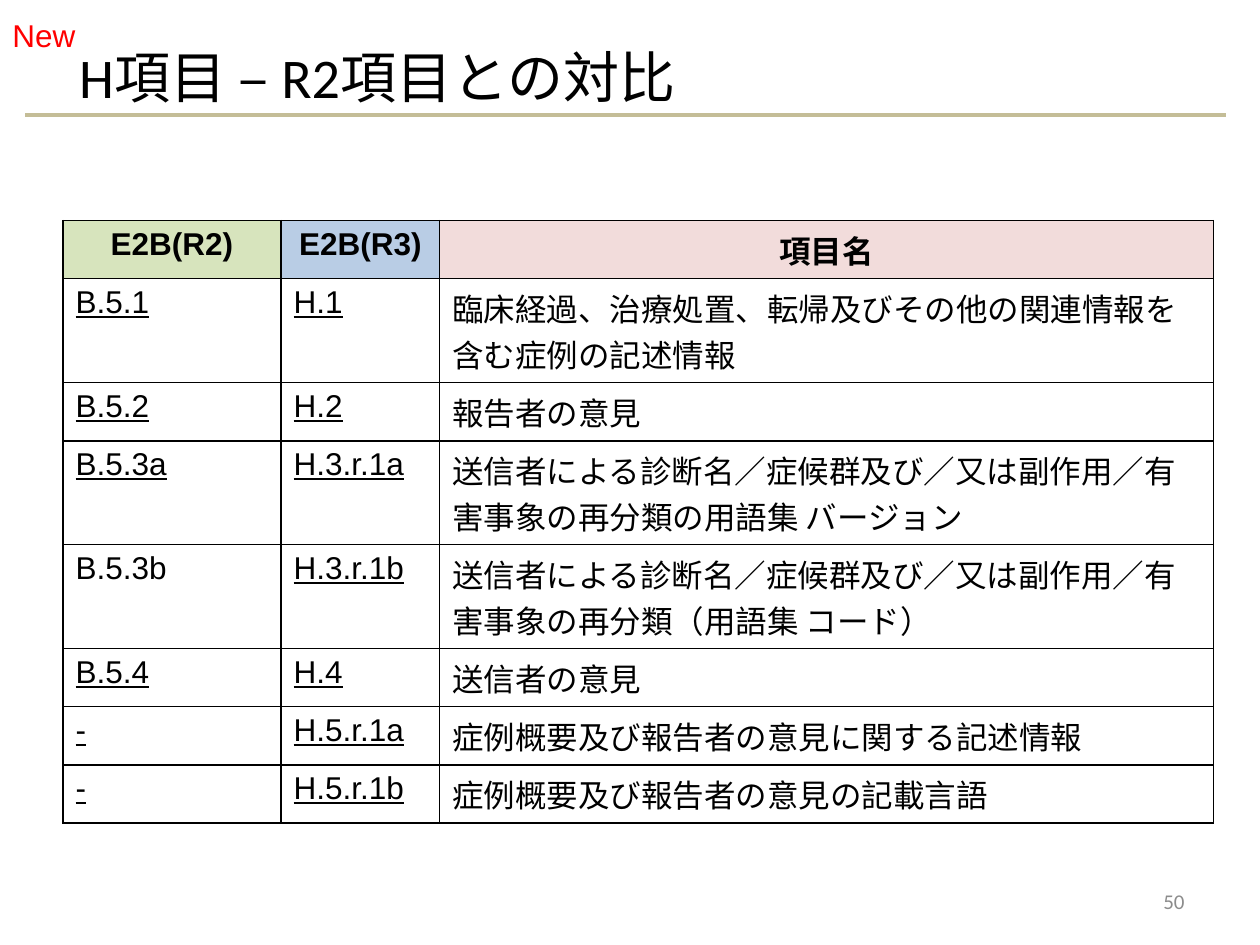
from lxml import etree
from pptx import Presentation
from pptx.dml.color import RGBColor
from pptx.enum.shapes import MSO_CONNECTOR
from pptx.enum.text import MSO_ANCHOR, PP_ALIGN
from pptx.oxml.ns import qn
from pptx.util import Inches, Pt

LEFT, CENTER, RIGHT = PP_ALIGN.LEFT, PP_ALIGN.CENTER, PP_ALIGN.RIGHT
TOP, MIDDLE = MSO_ANCHOR.TOP, MSO_ANCHOR.MIDDLE
STRAIGHT = MSO_CONNECTOR.STRAIGHT

COLORS = {"text": "000000", "new": "FF0000", "number": "8C8C8C", "rule": "C4BD97"}
HEADER = ["E2B(R2)", "E2B(R3)", "項目名"]
HEADER_FILLS = ["D7E4BD", "B9CDE5", "F2DCDB"]
ITEMS = [
    ("B.5.1", "H.1", "臨床経過、治療処置、転帰及びその他の関連情報を含む症例の記述情報"),
    ("B.5.2", "H.2", "報告者の意見"),
    ("B.5.3a", "H.3.r.1a", "送信者による診断名／症候群及び／又は副作用／有害事象の再分類の用語集 バージョン"),
    ("B.5.3b", "H.3.r.1b", "送信者による診断名／症候群及び／又は副作用／有害事象の再分類（用語集 コード）"),
    ("B.5.4", "H.4", "送信者の意見"),
    ("-", "H.5.r.1a", "症例概要及び報告者の意見に関する記述情報"),
    ("-", "H.5.r.1b", "症例概要及び報告者の意見の記載言語"),
]
NOT_UNDERLINED = {"B.5.3b"}
COLUMN_WIDTHS = [1.73, 1.26, 6.14]
ROW_HEIGHT = 0.41
TEXT_BOXES = [
    ("H項目 – R2項目との対比", (0.53, 0.3, 9, 0.61), 32, "Calibri", "text", LEFT, MIDDLE),
    ("New", (0, 0.08, 1.9, 0.4), 18, "Arial", "new", LEFT, TOP),
    ("50", (7.17, 6.95, 2.33, 0.4), 12, "Calibri", "number", RIGHT, MIDDLE),
]


def write(frame, text, size, font, color, align=LEFT, bold=False, underline=False):
    paragraph = frame.paragraphs[0]
    paragraph.alignment = align
    run = paragraph.add_run()
    run.text = text
    run.font.size = Pt(size)
    run.font.name = font
    run.font.bold = bold
    run.font.underline = underline
    run.font.color.rgb = RGBColor.from_string(COLORS[color])


def add_text(slide, text, box, size, font, color, align, anchor):
    frame = slide.shapes.add_textbox(*map(Inches, box)).text_frame
    frame.word_wrap = True
    frame.vertical_anchor = anchor
    write(frame, text, size, font, color, align)


def add_rule(slide):
    line = slide.shapes.add_connector(STRAIGHT, Inches(0.2), Inches(0.91), Inches(9.73), Inches(0.91))
    line.line.color.rgb = RGBColor.from_string(COLORS["rule"])
    line.line.width = Pt(2.25)
    etree.SubElement(line._element.spPr, qn("a:effectLst"))


def set_borders(cell):
    properties = cell._tc.get_or_add_tcPr()
    for index, side in enumerate(("a:lnL", "a:lnR", "a:lnT", "a:lnB")):
        border = etree.Element(qn(side), w=str(Pt(1)))
        fill = etree.SubElement(border, qn("a:solidFill"))
        etree.SubElement(fill, qn("a:srgbClr"), val=COLORS["text"])
        properties.insert(index, border)


def add_items_table(slide):
    rows = [HEADER, *ITEMS]
    table = slide.shapes.add_table(
        len(rows), len(HEADER), Inches(0.5), Inches(1.75),
        Inches(sum(COLUMN_WIDTHS)), Inches(ROW_HEIGHT * len(rows)),
    ).table
    table.horz_banding = False
    for column, width in zip(table.columns, COLUMN_WIDTHS):
        column.width = Inches(width)
    for row_index, values in enumerate(rows):
        table.rows[row_index].height = Inches(ROW_HEIGHT)
        is_header = row_index == 0
        for column_index, text in enumerate(values):
            cell = table.cell(row_index, column_index)
            is_code = not is_header and column_index < 2
            if is_header:
                cell.fill.solid()
                cell.fill.fore_color.rgb = RGBColor.from_string(HEADER_FILLS[column_index])
            else:
                cell.fill.background()
            set_borders(cell)
            write(
                cell.text_frame, text, 18, "Arial" if is_header or is_code else "Calibri", "text",
                CENTER if is_header else LEFT, is_header, is_code and text not in NOT_UNDERLINED,
            )


def main():
    presentation = Presentation()
    presentation.slide_width = Inches(10)
    presentation.slide_height = Inches(7.5)
    slide = presentation.slides.add_slide(presentation.slide_layouts[6])
    add_rule(slide)
    add_items_table(slide)
    for text_box in TEXT_BOXES:
        add_text(slide, *text_box)
    presentation.save("out.pptx")


if __name__ == "__main__":
    main()
